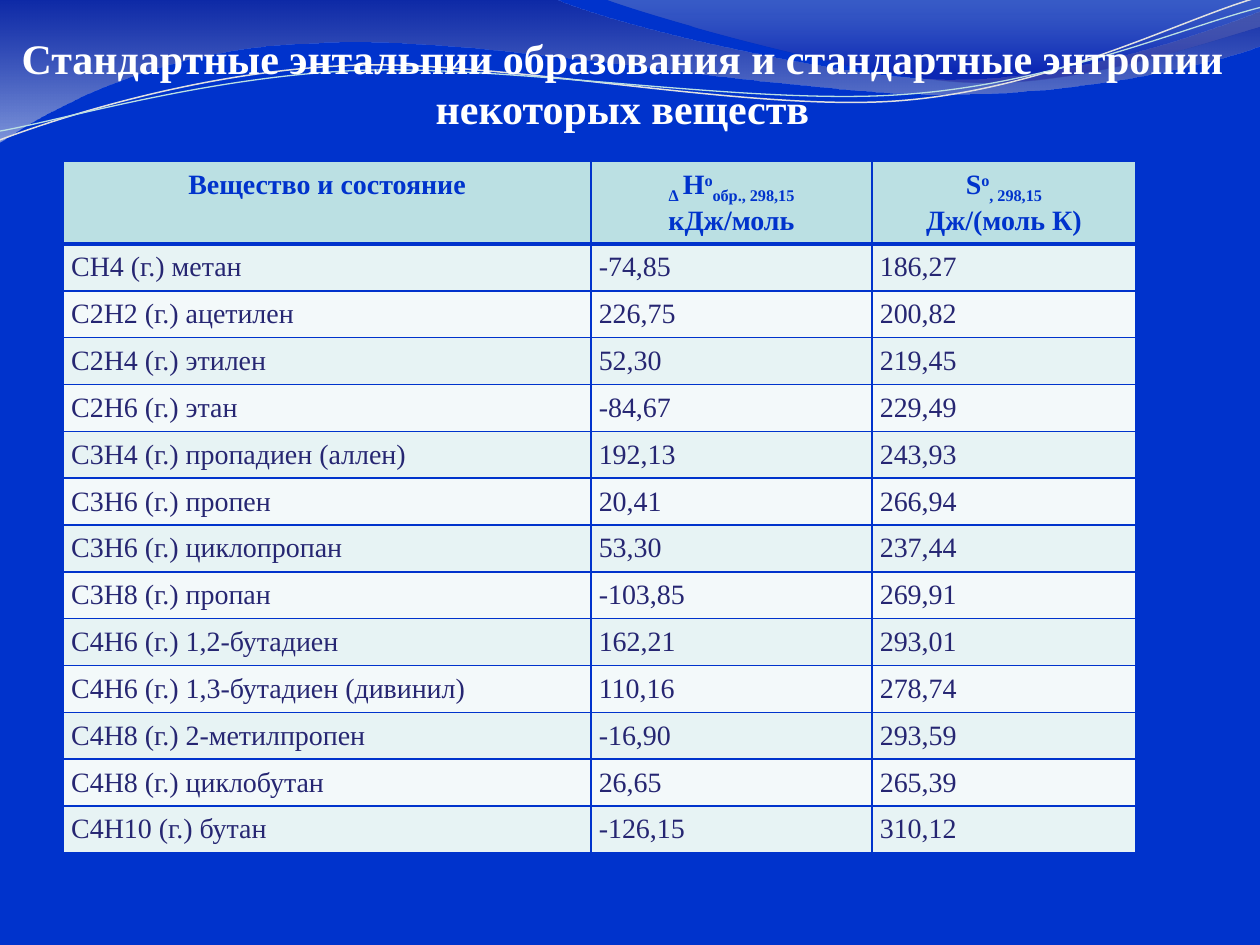
import math

from lxml import etree
from pptx import Presentation
from pptx.dml.color import RGBColor
from pptx.enum import text
from pptx.oxml.ns import qn
from pptx.util import Pt

THEME = {
    "font": "Times New Roman", "title": 24, "body": 16,
    "blue": "0033CC", "white": "FFFFFF", "ink": "262672",
    "head": "BBE0E3", "bands": ("E7F3F4", "F3F9FA"),
    "navy": "1E1E79", "pale": "E7E7E7", "grey": "BDBDBD", "deep": "1B1B99",
    "silver": "E1E1E1",
}
NBSP = chr(160)


def style(item, size, color, bold):
    """Set the font of a paragraph."""
    font = item.font
    font.name, font.size, font.bold = THEME["font"], Pt(size), bold
    font.color.rgb = RGBColor.from_string(THEME[color])


def trace(home, start, parts, close):
    """Draw an outline; a part is a line end (2 numbers) or a Bézier (6)."""
    pen = home.build_freeform(Pt(start[0]), Pt(start[1]))
    dots = [(Pt(part[i]), Pt(part[i + 1]))
            for part in parts for i in range(0, len(part), 2)]
    pen.add_line_segments(dots, close=close)
    shape = pen.convert_to_shape()
    shape.shadow.inherit = False
    steps = iter(list(shape.element.iter(qn("a:lnTo"))))
    for part in parts:
        first = next(steps)
        if len(part) == 6:
            first.tag = qn("a:cubicBezTo")
            for _ in range(2):
                step = next(steps)
                first.append(step[0])
                step.getparent().remove(step)
    return shape


prs = Presentation()
prs.slide_width, prs.slide_height = Pt(720), Pt(540)
slide = prs.slides.add_slide(prs.slide_layouts[6])
back = slide.background.fill
back.solid()
back.fore_color.rgb = RGBColor.from_string(THEME["blue"])

# Waves: start, parts, gradient stops (position, colour, opacity in %)
waves = [
    ((0, 0), [(316.8, -0.7), (342.7, 12.2, 478.1, 45.4, 545.8, 45.4),
              (614.2, 45.4, 689.8, 18.7, 720, 6.5), (720.7, 25.9),
              (707.8, 31.7, 626.4, 54.7, 537.1, 54),
              (447.8, 54, 275, 20.2, 185, 24.5),
              (92.9, 25.9, 33.1, 59.8, -0.7, 81.4), (0, 0)],
     [(0, "navy", 45), (1, "pale", 55)]),
    ((344.9, -0.7), [(366.5, 7.9, 491, 44.6, 553.7, 46.8),
                     (616.3, 49.7, 691.9, 23, 720, 15.1), (720, 0),
                     (344.9, -0.7)],
     [(0, "grey", 30), (0.8, "deep", 45)]),
]
for start, parts, stops in waves:
    wave = trace(slide.shapes, start, parts, True)
    wave.line.fill.background()
    wave.fill.gradient()
    wave.fill.gradient_angle = 270
    for stop, (place, color, _) in zip(wave.fill.gradient_stops, stops):
        stop.position = place
        stop.color.rgb = RGBColor.from_string(THEME[color])
    tints = wave.element.spPr.iter(qn("a:srgbClr"))
    for tint, (_, _, alpha) in zip(tints, stops):
        etree.SubElement(tint, qn("a:alpha"), val=str(alpha * 1000))

# Threads: laid flat about their middle, then tilted as shapes
threads = [
    ((359.3, 41.4), [(0, 79.9), (34.6, 67, 113.8, 41, 199.4, 37.4),
                     (284.4, 33.8, 427, 64.1, 513.4, 57.6),
                     (599.8, 51.1, 675.4, 10.8, 718.6, -1.4)], "silver", 0.85),
    ((359.6, 42.5), [(0, 74.9), (33.8, 69.1, 118.1, 43.9, 203.8, 40.3),
                     (290.2, 36.7, 429.8, 60.5, 516.2, 54),
                     (601.9, 48.2, 677.5, 15.1, 720, 4.3)], "head", 0.75),
]
tilt = 2.7
cos, sin = math.cos(math.radians(tilt)), math.sin(math.radians(tilt))
group = slide.shapes.add_group_shape()
for (mx, my), parts, color, width in threads:
    flat = []
    for part in parts:
        turned = []
        for x, y in zip(part[::2], part[1::2]):
            turned += [mx + (x - mx) * cos - (y - my) * sin,
                       my + (x - mx) * sin + (y - my) * cos]
        flat.append(turned)
    thread = trace(group.shapes, flat[0], flat[1:], False)
    thread.rotation = 360 - tilt
    thread.fill.background()
    thread.line.color.rgb = RGBColor.from_string(THEME[color])
    thread.line.width = Pt(width)

# Table: header cells hold lines of (text, baseline in %)
heads = [
    [[("Вещество и состояние", 0)]],
    [[("Δ" + NBSP, -25), ("H", 0), ("o", 30), ("обр., 298,15", -25)],
     [("кДж/моль", 0)]],
    [[("S", 0), ("o", 30), (", 298,15", -25)], [("Дж/(моль К)", 0)]],
]
gases = [
    ("CH4", "метан", "-74,85", "186,27"),
    ("C2H2", "ацетилен", "226,75", "200,82"),
    ("C2H4", "этилен", "52,30", "219,45"),
    ("C2H6", "этан", "-84,67", "229,49"),
    ("C3H4", "пропадиен (аллен)", "192,13", "243,93"),
    ("C3H6", "пропен", "20,41", "266,94"),
    ("C3H6", "циклопропан", "53,30", "237,44"),
    ("C3H8", "пропан", "-103,85", "269,91"),
    ("C4H6", "1,2-бутадиен", "162,21", "293,01"),
    ("C4H6", "1,3-бутадиен (дивинил)", "110,16", "278,74"),
    ("C4H8", "2-метилпропен", "-16,90", "293,59"),
    ("C4H8", "циклобутан", "26,65", "265,39"),
    ("C4H10", "бутан", "-126,15", "310,12"),
]
grid = [heads]
for code, name, heat, chaos in gases:
    words = f"{code}{NBSP}(г.) {name}", heat, chaos
    grid.append([[[(word, 0)]] for word in words])
frame = slide.shapes.add_table(len(grid), 3, Pt(36.2), Pt(92.4),
                               Pt(612.9), Pt(394.88))
table = frame.table
table.horz_banding = False
for col, width in zip(table.columns, (301.5, 160.6, 150.8)):
    col.width = Pt(width)
for r, row in enumerate(grid):
    table.rows[r].height = Pt(26.76 if r else 47)
    for c, lines in enumerate(row):
        cell = table.cell(r, c)
        cell.margin_left = cell.margin_right = Pt(4.5)
        cell.margin_top = cell.margin_bottom = Pt(4.5)
        for side in "LRTB":
            thick = 3 if (r, side) in ((0, "B"), (1, "T")) else 1
            edge = etree.SubElement(cell._tc.get_or_add_tcPr(),
                                    qn("a:ln" + side), w=str(Pt(thick)))
            fill = etree.SubElement(edge, qn("a:solidFill"))
            etree.SubElement(fill, qn("a:srgbClr"), val=THEME["blue"])
        cell.fill.solid()
        shade = THEME["bands"][(r - 1) % 2] if r else THEME["head"]
        cell.fill.fore_color.rgb = RGBColor.from_string(shade)
        for i, line in enumerate(lines):
            body = cell.text_frame
            para = body.add_paragraph() if i else body.paragraphs[0]
            para.alignment = text.PP_ALIGN.LEFT if r else text.PP_ALIGN.CENTER
            style(para, THEME["body"], "ink" if r else "blue", not r)
            for word, base in line:
                run = para.add_run()
                run.text = word
                if base:
                    run.font._element.set("baseline", str(base * 1000))

title = slide.shapes.add_textbox(Pt(-8.6), Pt(15), Pt(728.6), Pt(65.5))
title.text_frame.word_wrap = True
para = title.text_frame.paragraphs[0]
para.text = ("Стандартные энтальпии образования и стандартные энтропии "
             "некоторых веществ")
para.alignment = text.PP_ALIGN.CENTER
style(para, THEME["title"], "white", True)

prs.save("out.pptx")
